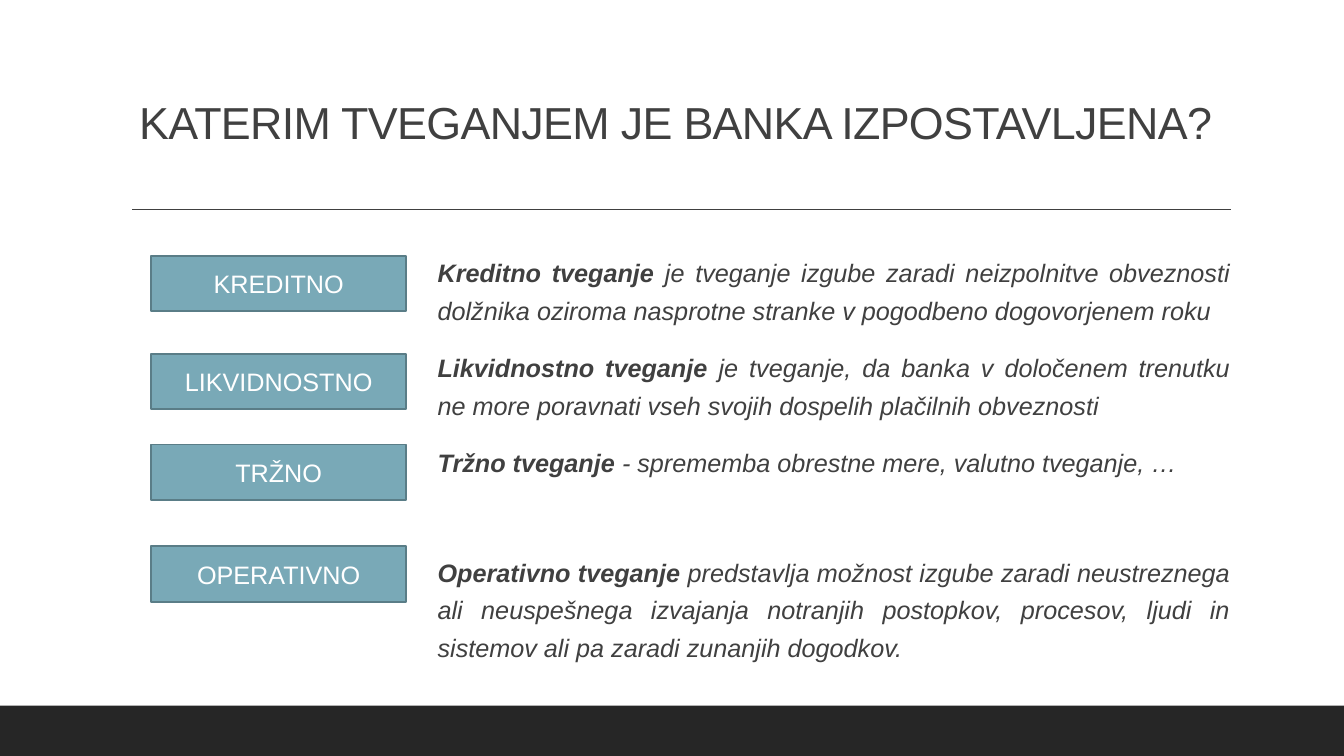
from dataclasses import dataclass

from lxml.etree import SubElement
from pptx import Presentation
from pptx.dml.color import RGBColor
from pptx.enum.shapes import MSO_CONNECTOR, MSO_SHAPE
from pptx.enum.text import MSO_ANCHOR, PP_ALIGN
from pptx.oxml.ns import qn
from pptx.util import Inches, Pt


@dataclass(frozen=True)
class Theme:
    font: str = "Arial"
    ink: str = "404040"
    band: str = "262626"
    label_fill: str = "79A9B7"
    label_line: str = "5A7D87"
    label_ink: str = "FFFFFF"
    title_size: int = 32
    text_size: int = 18


@dataclass(frozen=True)
class Box:
    left: float
    top: float
    width: float
    height: float

    def inner(self, left, top, width, height):
        """Return an inner box given in percent of this one."""
        return Box(self.left + self.width * left / 100, self.top + self.height * top / 100,
                   self.width * width / 100, self.height * height / 100)

    def place(self):
        return [Inches(n) for n in (self.left, self.top, self.width, self.height)]


THEME = Theme()
SLIDE = Box(0, 0, 13.33, 7.5)

# Label, its top in percent of the label column, term, definition, space before
RISKS = [
    ("KREDITNO", 0, "Kreditno tveganje ",
     "je tveganje izgube zaradi neizpolnitve obveznosti dolžnika oziroma nasprotne "
     "stranke v pogodbeno dogovorjenem roku", 12),
    ("LIKVIDNOSTNO", 28.28, "Likvidnostno tveganje ",
     "je tveganje, da banka v določenem trenutku ne more poravnati vseh svojih "
     "dospelih plačilnih obveznosti", 12),
    ("TRŽNO", 54.52, "Tržno tveganje ",
     "- sprememba obrestne mere, valutno tveganje, …", 12),
    ("OPERATIVNO", 83.97, "Operativno tveganje ",
     "predstavlja možnost izgube zaradi neustreznega ali neuspešnega izvajanja notranjih "
     "postopkov, procesov, ljudi in sistemov ali pa zaradi zunanjih dogodkov.", 49),
]
LABEL_HEIGHT = 16.03


def add_text(paragraph, text, size=THEME.text_size, color=THEME.ink,
             bold=False, italic=False, tracking=0):
    run = paragraph.add_run()
    run.text = text
    font = run.font
    font.name, font.size, font.bold, font.italic = THEME.font, Pt(size), bold, italic
    font.color.rgb = RGBColor.from_string(color)
    if tracking:
        run._r.get_or_add_rPr().set("spc", str(int(tracking * 100)))


def add_panel(slide, box, fill, line=None):
    panel = slide.shapes.add_shape(MSO_SHAPE.RECTANGLE, *box.place())
    panel.shadow.inherit = False
    panel.fill.solid()
    panel.fill.fore_color.rgb = RGBColor.from_string(fill)
    if line:
        panel.line.color.rgb = RGBColor.from_string(line)
        panel.line.width = Pt(1.25)
    else:
        panel.line.fill.background()
    return panel


def add_header(slide, box):
    # Title
    title = slide.shapes.add_textbox(*box.inner(0, 0, 100, 68.93).place()).text_frame
    title.word_wrap = True
    title.vertical_anchor = MSO_ANCHOR.BOTTOM
    heading = title.paragraphs[0]
    heading.alignment = PP_ALIGN.CENTER
    heading.line_spacing = 0.9
    add_text(heading, "KATERIM TVEGANJEM JE BANKA IZPOSTAVLJENA?",
             size=THEME.title_size, tracking=-0.5)

    # Rule under the title
    left, top, width, _ = box.inner(1, 100, 99.09, 0).place()
    rule = slide.shapes.add_connector(MSO_CONNECTOR.STRAIGHT, left, top, left + width, top)
    rule.line.color.rgb = RGBColor.from_string(THEME.ink)
    rule.line.width = Pt(1)
    SubElement(rule._element.spPr, qn("a:effectLst"))


def add_definitions(slide, box):
    definitions = slide.shapes.add_textbox(*box.place()).text_frame
    definitions.word_wrap = True
    definitions.margin_left = definitions.margin_right = 0
    for index, (_, _, term, meaning, space_before) in enumerate(RISKS):
        entry = definitions.add_paragraph() if index else definitions.paragraphs[0]
        entry.alignment = PP_ALIGN.JUSTIFY
        entry.line_spacing = 1.25
        entry.space_before, entry.space_after = Pt(space_before), Pt(2)
        add_text(entry, term, bold=True, italic=True)
        add_text(entry, meaning, italic=True)


def add_labels(slide, box):
    for name, top, *_ in RISKS:
        label = add_panel(slide, box.inner(0, top, 100, LABEL_HEIGHT),
                          THEME.label_fill, THEME.label_line).text_frame
        label.vertical_anchor = MSO_ANCHOR.MIDDLE
        label.paragraphs[0].alignment = PP_ALIGN.CENTER
        add_text(label.paragraphs[0], name, color=THEME.label_ink)


def main():
    deck = Presentation()
    deck.slide_width, deck.slide_height = Inches(SLIDE.width), Inches(SLIDE.height)
    slide = deck.slides.add_slide(deck.slide_layouts[6])
    add_panel(slide, SLIDE.inner(0, 93.33, 100, 6.67), THEME.band)
    add_header(slide, SLIDE.inner(9, 4.13, 82.52, 23.6))
    add_definitions(slide, SLIDE.inner(32.56, 32.4, 58.96, 61.2))
    add_labels(slide, SLIDE.inner(11.25, 33.87, 18.98, 45.73))
    deck.save("out.pptx")


if __name__ == "__main__":
    main()
